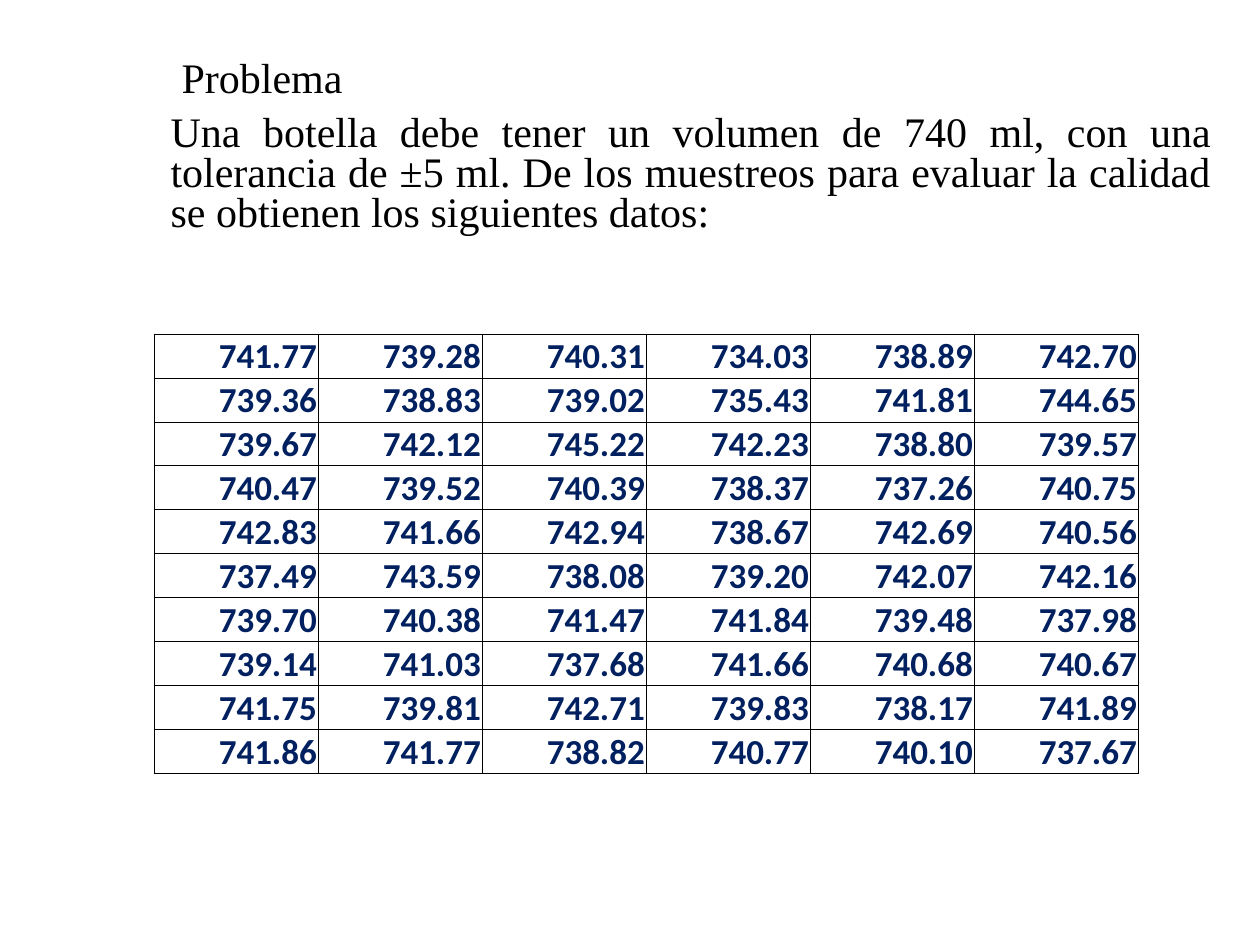
"""Build a slide with a bottle volume problem and its table of samples."""
from lxml import etree
from pptx import Presentation
from pptx import util as u
from pptx.dml.color import RGBColor
from pptx.enum import text
from pptx.oxml.ns import qn

PX = u.Inches(1) / 126
COLORS = {"text": "000000", "figures": "002060", "border": "000000"}
HEADING = "Problema"
STATEMENT = (
    "Una botella debe tener un volumen de 740 ml, con una tolerancia de ±5 ml. "
    "De los muestreos para evaluar la calidad se obtienen los siguientes datos:"
)
SAMPLES = """
741.77 739.28 740.31 734.03 738.89 742.70
739.36 738.83 739.02 735.43 741.81 744.65
739.67 742.12 745.22 742.23 738.80 739.57
740.47 739.52 740.39 738.37 737.26 740.75
742.83 741.66 742.94 738.67 742.69 740.56
737.49 743.59 738.08 739.20 742.07 742.16
739.70 740.38 741.47 741.84 739.48 737.98
739.14 741.03 737.68 741.66 740.68 740.67
741.75 739.81 742.71 739.83 738.17 741.89
741.86 741.77 738.82 740.77 740.10 737.67
"""


def px(length):
    """Turn pixels into EMU."""
    return u.Emu(round(length * PX))


def set_font(para, name, size, color, bold=False):
    """Format all the text of a paragraph."""
    font = para.font
    font.name, font.size, font.bold = name, u.Pt(size), bold
    font.color.rgb = RGBColor.from_string(COLORS[color])


def format_statement(para, words, margin, align):
    """Fill a body paragraph that has a left margin and no bullet."""
    para.text = words
    para.alignment = align
    para.line_spacing = 0.8
    para.space_before = u.Pt(7.5)
    set_font(para, "Times New Roman", 24, "text")
    properties = para._p.get_or_add_pPr()
    properties.set("marL", str(px(margin)))
    properties.set("indent", "0")
    bullet = etree.Element(qn("a:buNone"))
    properties.find(qn("a:defRPr")).addprevious(bullet)


def fill_body(body):
    """Place the body placeholder and write the problem in it."""
    body.left, body.top, body.width, body.height = map(px, (74, 55, 1150, 853))
    frame = body.text_frame
    frame.word_wrap = True
    frame.auto_size = text.MSO_AUTO_SIZE.NONE
    frame.vertical_anchor = text.MSO_ANCHOR.TOP
    format_statement(frame.paragraphs[0], HEADING, 95, text.PP_ALIGN.LEFT)
    format_statement(frame.add_paragraph(), STATEMENT, 84, text.PP_ALIGN.JUSTIFY)


def add_borders(cell):
    """Draw a thin line on each side of a cell."""
    properties = cell._tc.get_or_add_tcPr()
    for index, side in enumerate(("lnL", "lnR", "lnT", "lnB")):
        line = etree.Element(qn(f"a:{side}"), w=str(u.Pt(0.5)))
        fill = etree.SubElement(line, qn("a:solidFill"))
        etree.SubElement(fill, qn("a:srgbClr"), val=COLORS["border"])
        properties.insert(index, line)


def format_cell(cell, figure):
    """Write one sample, right-aligned at the foot of its cell."""
    cell.text = figure
    cell.fill.background()
    cell.margin_left = cell.margin_right = cell.margin_top = px(1)
    cell.margin_bottom = 0
    cell.vertical_anchor = text.MSO_ANCHOR.BOTTOM
    para = cell.text_frame.paragraphs[0]
    para.alignment = text.PP_ALIGN.RIGHT
    set_font(para, "Calibri", 20, "figures", bold=True)
    add_borders(cell)


def add_samples(page):
    """Add the table of measured volumes."""
    rows = [line.split() for line in SAMPLES.strip().splitlines()]
    count, columns = len(rows), len(rows[0])
    table = page.shapes.add_table(
        count, columns, px(154), px(334), px(164 * columns), px(44 * count)
    ).table
    table.first_row = table.horz_banding = False
    for cell, figure in zip(table.iter_cells(), sum(rows, [])):
        format_cell(cell, figure)


def main():
    """Build and save the deck."""
    deck = Presentation()
    deck.slide_width, deck.slide_height = px(1260), px(945)
    page = deck.slides.add_slide(deck.slide_layouts[1])
    title = page.shapes.title.element
    title.getparent().remove(title)
    fill_body(page.placeholders[1])
    add_samples(page)
    deck.save("out.pptx")


if __name__ == "__main__":
    main()
